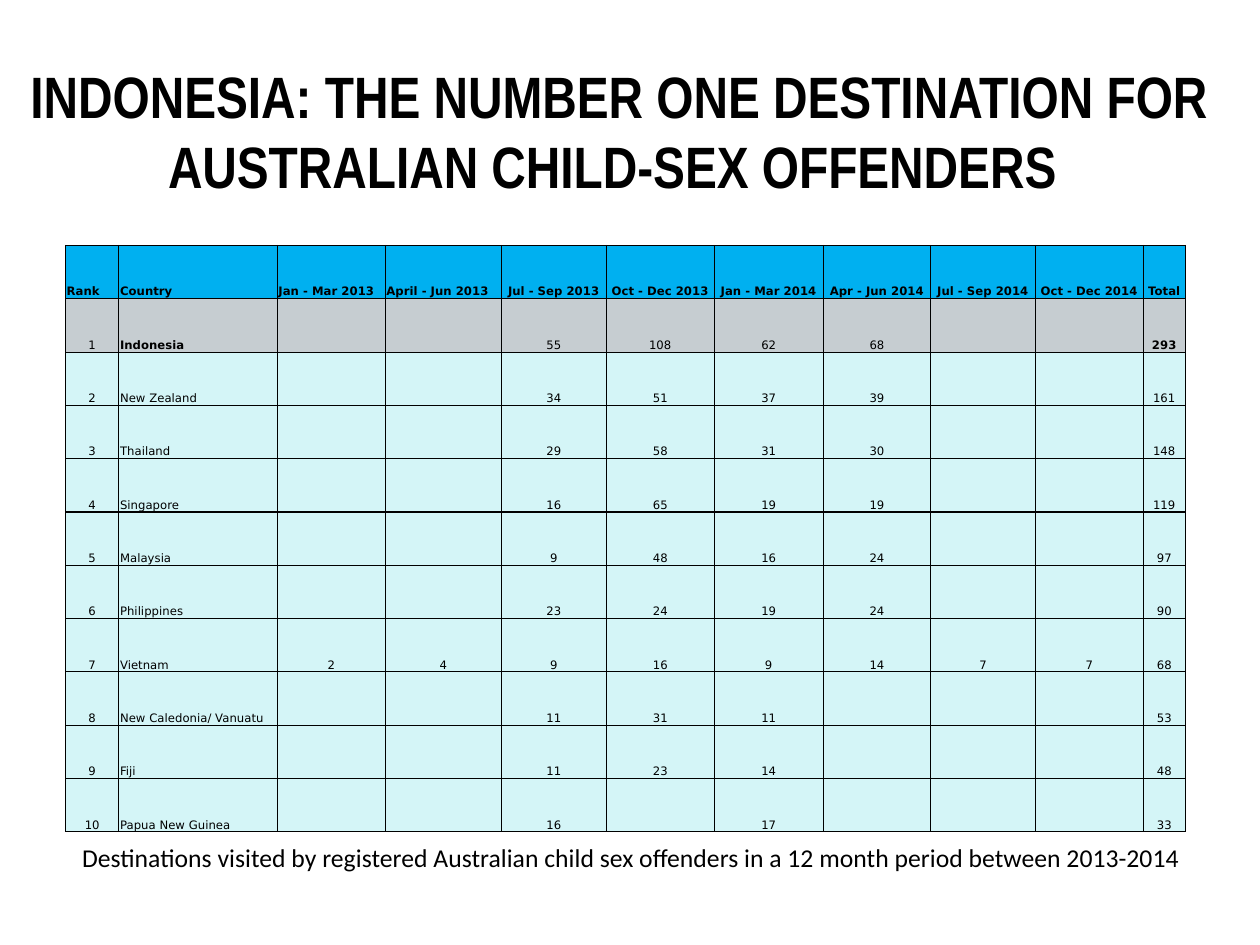
"""Build the slide ranking destinations of registered Australian offenders."""
from dataclasses import dataclass

from lxml.etree import SubElement
from pptx import Presentation
from pptx.dml.color import RGBColor
from pptx.enum.text import MSO_ANCHOR, PP_ALIGN
from pptx.oxml.ns import qn
from pptx.util import Pt


@dataclass(frozen=True)
class Theme:
    ink: str = "000000"
    header: str = "00B0F0"
    highlight: str = "C6CDD1"
    body: str = "D4F5F7"
    title_font: str = "Arial Narrow"
    caption_font: str = "Calibri"
    table_font: str = "DejaVu Sans"
    title_size: float = 25
    caption_size: float = 11
    table_size: float = 5
    border_width: float = 0.5


theme = Theme()


def write_text(frame, text, *, font, size, bold=False, align=PP_ALIGN.LEFT):
    frame.word_wrap = True
    paragraph = frame.paragraphs[0]
    paragraph.alignment = align
    run = paragraph.add_run()
    run.text = text
    run.font.name = font
    run.font.size = Pt(size)
    run.font.bold = bold
    run.font.color.rgb = RGBColor.from_string(theme.ink)


def draw_borders(cell):
    properties = cell._tc.get_or_add_tcPr()
    for side in ("lnL", "lnR", "lnT", "lnB"):
        line = SubElement(properties, qn(f"a:{side}"), w=str(Pt(theme.border_width)))
        fill = SubElement(line, qn("a:solidFill"))
        SubElement(fill, qn("a:srgbClr"), val=theme.ink)


presentation = Presentation()
presentation.slide_width = Pt(540)
presentation.slide_height = Pt(405)
slide = presentation.slides.add_slide(presentation.slide_layouts[6])

headers = [
    "Rank", "Country", "Jan - Mar 2013", "April - Jun 2013", "Jul - Sep 2013",
    "Oct - Dec 2013", "Jan - Mar 2014", "Apr - Jun 2014", "Jul - Sep 2014",
    "Oct - Dec 2014", "Total",
]
destinations = [
    ("Indonesia", "", "", 55, 108, 62, 68, "", "", 293),
    ("New Zealand", "", "", 34, 51, 37, 39, "", "", 161),
    ("Thailand", "", "", 29, 58, 31, 30, "", "", 148),
    ("Singapore", "", "", 16, 65, 19, 19, "", "", 119),
    ("Malaysia", "", "", 9, 48, 16, 24, "", "", 97),
    ("Philippines", "", "", 23, 24, 19, 24, "", "", 90),
    ("Vietnam", 2, 4, 9, 16, 9, 14, 7, 7, 68),
    ("New Caledonia/ Vanuatu", "", "", 11, 31, 11, "", "", "", 53),
    ("Fiji", "", "", 11, 23, 14, "", "", "", 48),
    ("Papua New Guinea", "", "", 16, "", 17, "", "", "", 33),
]
rows = [headers] + [(rank, *values) for rank, values in enumerate(destinations, 1)]
column_widths = [22.9, 67.9, 46.3, 49.7, 45, 46.3, 46.7, 46.1, 44.8, 46.3, 18]
row_height = 22.85

table = slide.shapes.add_table(
    len(rows), len(headers), Pt(28.1), Pt(105.2),
    Pt(sum(column_widths)), Pt(row_height * len(rows)),
).table
table.first_row = False
table.horz_banding = False
for column, width in zip(table.columns, column_widths):
    column.width = Pt(width)

row_fills = [theme.header, theme.highlight] + [theme.body] * (len(rows) - 2)
for row_index, (values, row_fill) in enumerate(zip(rows, row_fills)):
    table.rows[row_index].height = Pt(row_height)
    for column_index, value in enumerate(values):
        cell = table.cell(row_index, column_index)
        draw_borders(cell)
        cell.fill.solid()
        cell.fill.fore_color.rgb = RGBColor.from_string(row_fill)
        cell.vertical_anchor = MSO_ANCHOR.BOTTOM
        cell.margin_left = cell.margin_right = cell.margin_top = Pt(0.5)
        cell.margin_bottom = Pt(0)
        is_header = row_index == 0
        is_left = column_index == 1 or (is_header and column_index < 4)
        write_text(
            cell.text_frame, str(value), font=theme.table_font, size=theme.table_size,
            bold=is_header or (row_index == 1 and column_index in (1, 10)),
            align=PP_ALIGN.LEFT if is_left else PP_ALIGN.CENTER,
        )

title = slide.shapes.add_textbox(Pt(0), Pt(22.3), Pt(530.6), Pt(40.3))
write_text(
    title.text_frame,
    "INDONESIA: THE NUMBER ONE DESTINATION FOR AUSTRALIAN CHILD-SEX OFFENDERS ",
    font=theme.title_font, size=theme.title_size, bold=True, align=PP_ALIGN.CENTER,
)

caption = slide.shapes.add_textbox(Pt(28.1), Pt(357.1), Pt(493.9), Pt(20.9))
write_text(
    caption.text_frame,
    "Destinations visited by registered Australian child sex offenders "
    "in a 12 month period between 2013-2014",
    font=theme.caption_font, size=theme.caption_size,
)

presentation.save("out.pptx")
